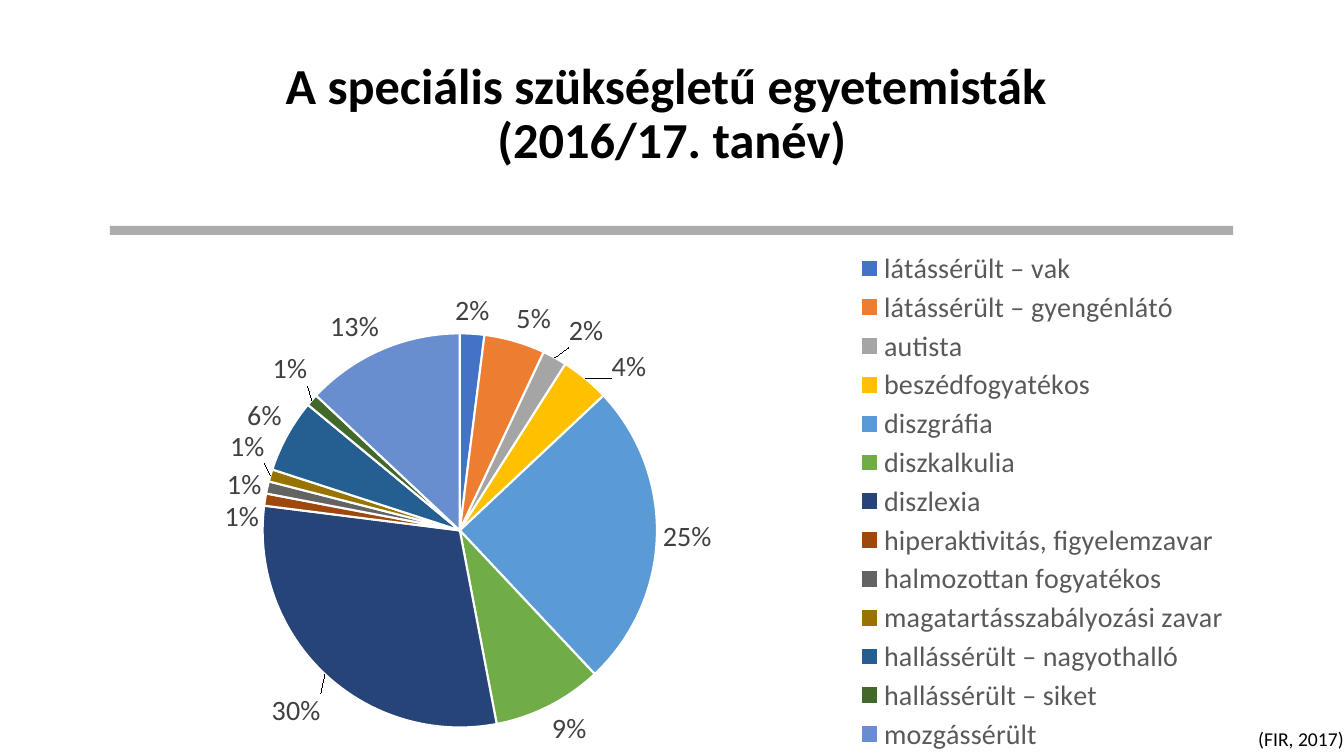
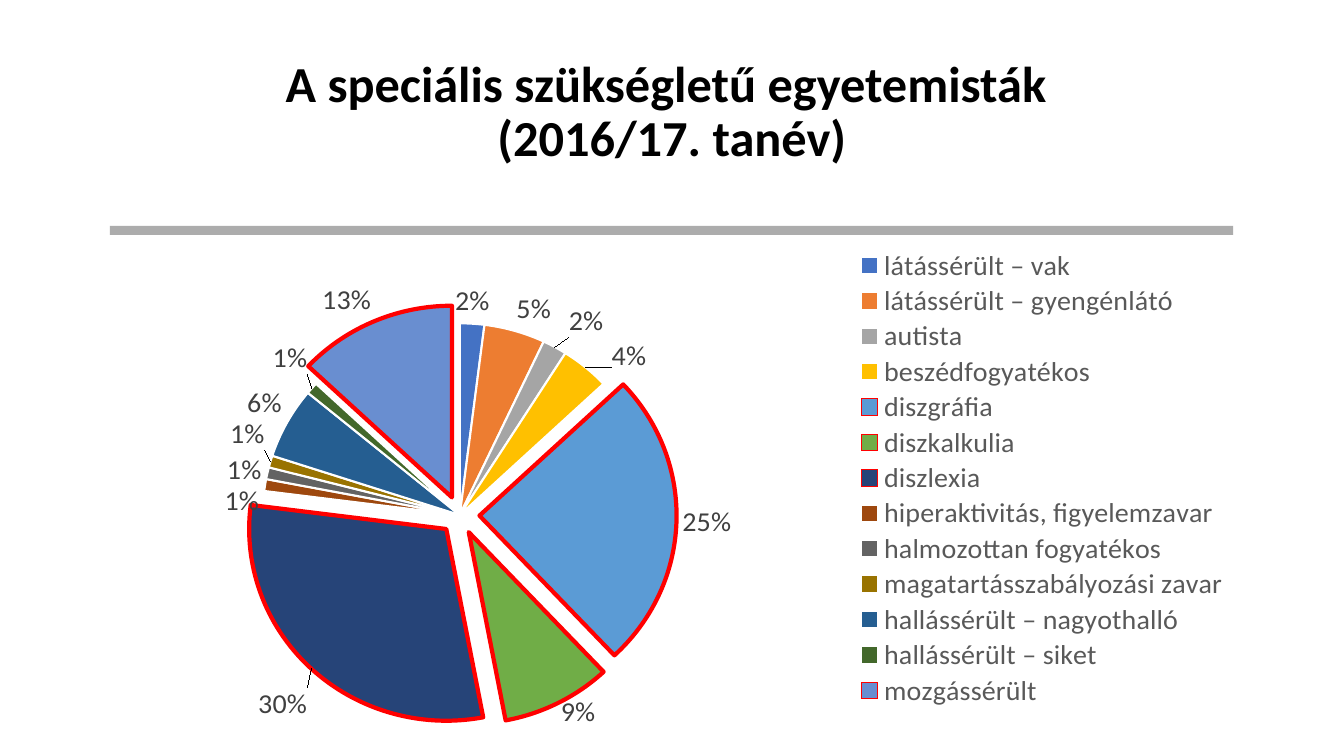
import dataclasses

import pptx
import pptx.chart.data
import pptx.dml.color
import pptx.enum.chart
import pptx.enum.shapes
import pptx.enum.text
import pptx.oxml
import pptx.oxml.ns
import pptx.util

Inches = pptx.util.Inches
Pt = pptx.util.Pt
qn = pptx.oxml.ns.qn


@dataclasses.dataclass(frozen=True)
class Theme:
    font: str = "Calibri"
    text: str = "000000"
    band: str = "808080"
    band_opacity: int = 65
    legend: str = "595959"
    label: str = "404040"
    slice_edge: str = "FFFFFF"
    highlight: str = "FF0000"
    slices: tuple = ("4472C4", "ED7D31", "A5A5A5", "FFC000", "5B9BD5", "70AD47", "264478",
                     "9E480E", "636363", "997300", "255E91", "43682B", "698ED0")
    title_size: int = 36
    chart_size: int = 20
    source_size: int = 14
    edge_width: float = 1.5
    highlight_width: float = 3


TITLE = ("A speciális szükségletű egyetemisták ", "(2016/17. tanév)")
SHARES = {
    "látássérült – vak": 2,
    "látássérült – gyengénlátó": 5,
    "autista": 2,
    "beszédfogyatékos": 4,
    "diszgráfia": 25,
    "diszkalkulia": 9,
    "diszlexia": 30,
    "hiperaktivitás, figyelemzavar": 1,
    "halmozottan fogyatékos ": 1,
    "magatartásszabályozási zavar": 1,
    "hallássérült – nagyothalló": 6,
    "hallássérült – siket": 1,
    "mozgássérült": 13,
}
# Shifts of crowded labels, as fractions of the chart
LABEL_SHIFTS = {
    "autista": (0.01, -0.01),
    "beszédfogyatékos": (0.02, 0.02),
    "diszlexia": (0, 0.03),
    "hiperaktivitás, figyelemzavar": (0, 0.07),
    "halmozottan fogyatékos ": (0, 0.03),
    "magatartásszabályozási zavar": (0, -0.02),
    "hallássérült – siket": (0, -0.02),
}
LARGEST = ("diszgráfia", "diszkalkulia", "diszlexia", "mozgássérült")


def chart_element(tag, value):
    return pptx.oxml.parse_xml(
        f'<c:{tag} xmlns:c="http://schemas.openxmlformats.org/drawingml/2006/chart" val="{value}"/>')


def set_layout(parent, index, **settings):
    """Give a chart part a manual layout, at its place among the children."""
    for previous in parent.findall(qn("c:layout")):
        parent.remove(previous)
    layout = pptx.oxml.parse_xml(
        '<c:layout xmlns:c="http://schemas.openxmlformats.org/drawingml/2006/chart">'
        "<c:manualLayout/></c:layout>")
    for tag, value in settings.items():
        layout[0].append(chart_element(tag, value))
    parent.insert(index, layout)


class Deck:
    def __init__(self, theme):
        self.theme = theme
        self.presentation = pptx.Presentation()
        self.presentation.slide_width = Inches(13.33)
        self.presentation.slide_height = Inches(7.5)
        self.slide = None

    def color(self, value):
        return pptx.dml.color.RGBColor.from_string(value)

    def style(self, font, size, color, bold=False):
        font.name = self.theme.font
        font.size = Pt(size)
        font.bold = bold
        font.color.rgb = self.color(color)

    def new_slide(self, title_top):
        self.slide = self.presentation.slides.add_slide(self.presentation.slide_layouts[6])
        self.title(title_top)
        self.band()

    def title(self, top):
        frame = self.slide.shapes.add_textbox(
            Inches(0.95), Inches(top), Inches(11.43), Inches(1.45)).text_frame
        frame.word_wrap = True
        frame.vertical_anchor = pptx.enum.text.MSO_ANCHOR.MIDDLE
        heading = frame.paragraphs[0]
        heading.alignment = pptx.enum.text.PP_ALIGN.CENTER
        heading.line_spacing = 0.9
        for number, line in enumerate(TITLE):
            if number:
                heading.add_line_break()
            run = heading.add_run()
            run.text = line
            self.style(run.font, self.theme.title_size, self.theme.text, bold=True)

    def band(self):
        band = self.slide.shapes.add_shape(
            pptx.enum.shapes.MSO_SHAPE.RECTANGLE,
            Inches(1.09), Inches(2.24), Inches(11.14), Inches(0.09))
        band.shadow.inherit = False
        band.line.fill.background()
        band.fill.solid()
        band.fill.fore_color.rgb = self.color(self.theme.band)
        tint = band._element.spPr.find(qn("a:solidFill"))[0]
        opacity = pptx.oxml.parse_xml(
            '<a:alpha xmlns:a="http://schemas.openxmlformats.org/drawingml/2006/main" '
            f'val="{self.theme.band_opacity * 1000}"/>')
        tint.append(opacity)

    def pie(self, height, legend_height, highlighted=()):
        shares = pptx.chart.data.CategoryChartData(number_format="0")
        shares.categories = list(SHARES)
        shares.add_series("Series 1", list(SHARES.values()))
        chart = self.slide.shapes.add_chart(
            pptx.enum.chart.XL_CHART_TYPE.PIE,
            Inches(1.09), Inches(2.45), Inches(11.14), Inches(height), shares).chart
        chart.has_title = False
        self.style(chart.font, 10, self.theme.text)
        plot = chart.plots[0]
        plot.vary_by_categories = True
        set_layout(plot._element.getparent(), 0, layoutTarget="inner", xMode="edge",
                   yMode="edge", x=0.136, y=0.115, w=0.351, h=0.884)
        self.legend(chart, legend_height)
        self.slices(plot.series[0], highlighted)
        self.labels(plot.series[0])

    def legend(self, chart, height):
        chart.has_legend = True
        legend = chart.legend
        legend.position = pptx.enum.chart.XL_LEGEND_POSITION.RIGHT
        legend.include_in_layout = False
        self.style(legend.font, self.theme.chart_size, self.theme.legend)
        set_layout(legend._element, 1, xMode="edge", yMode="edge",
                   x=0.66, y=0, w=0.34, h=height)

    def slices(self, series, highlighted):
        theme = self.theme
        for index, (category, fill) in enumerate(zip(SHARES, theme.slices)):
            stands_out = category in highlighted
            look = series.points[index].format
            look.fill.solid()
            look.fill.fore_color.rgb = self.color(fill)
            look.line.color.rgb = self.color(theme.highlight if stands_out else theme.slice_edge)
            look.line.width = Pt(theme.highlight_width if stands_out else theme.edge_width)
            if stands_out:
                point = series._element.findall(qn("c:dPt"))[index]
                point.find(qn("c:spPr")).addprevious(chart_element("explosion", 10))

    def labels(self, series):
        outside = pptx.enum.chart.XL_LABEL_POSITION.OUTSIDE_END
        labels = series.data_labels
        labels.show_percentage = True
        labels.show_value = False
        labels.number_format = "0%"
        labels.number_format_is_linked = False
        labels.position = outside
        self.style(labels.font, self.theme.chart_size, self.theme.label)
        # Shifted labels carry their own settings
        categories = list(SHARES)
        for category in LABEL_SHIFTS:
            label = series.points[categories.index(category)].data_label
            label.position = outside
            self.style(label.font, self.theme.chart_size, self.theme.label)
        for element, (x, y) in zip(labels._element.findall(qn("c:dLbl")), LABEL_SHIFTS.values()):
            element.find(qn("c:showVal")).set("val", "0")
            element.find(qn("c:showPercent")).set("val", "1")
            set_layout(element, 1, x=x, y=y)

    def source(self, text):
        frame = self.slide.shapes.add_textbox(
            Inches(12.38), Inches(7.16), Inches(1.08), Inches(0.34)).text_frame
        frame.word_wrap = False
        run = frame.paragraphs[0].add_run()
        run.text = text
        self.style(run.font, self.theme.source_size, self.theme.text)


def main():
    deck = Deck(Theme())

    # All groups
    deck.new_slide(title_top=0.42)
    deck.pie(height=5.05, legend_height=1)
    deck.source("(FIR, 2017)")

    # Largest groups pulled out
    deck.new_slide(title_top=0.4)
    deck.pie(height=4.91, legend_height=0.96, highlighted=LARGEST)

    deck.presentation.save("out.pptx")


if __name__ == "__main__":
    main()
